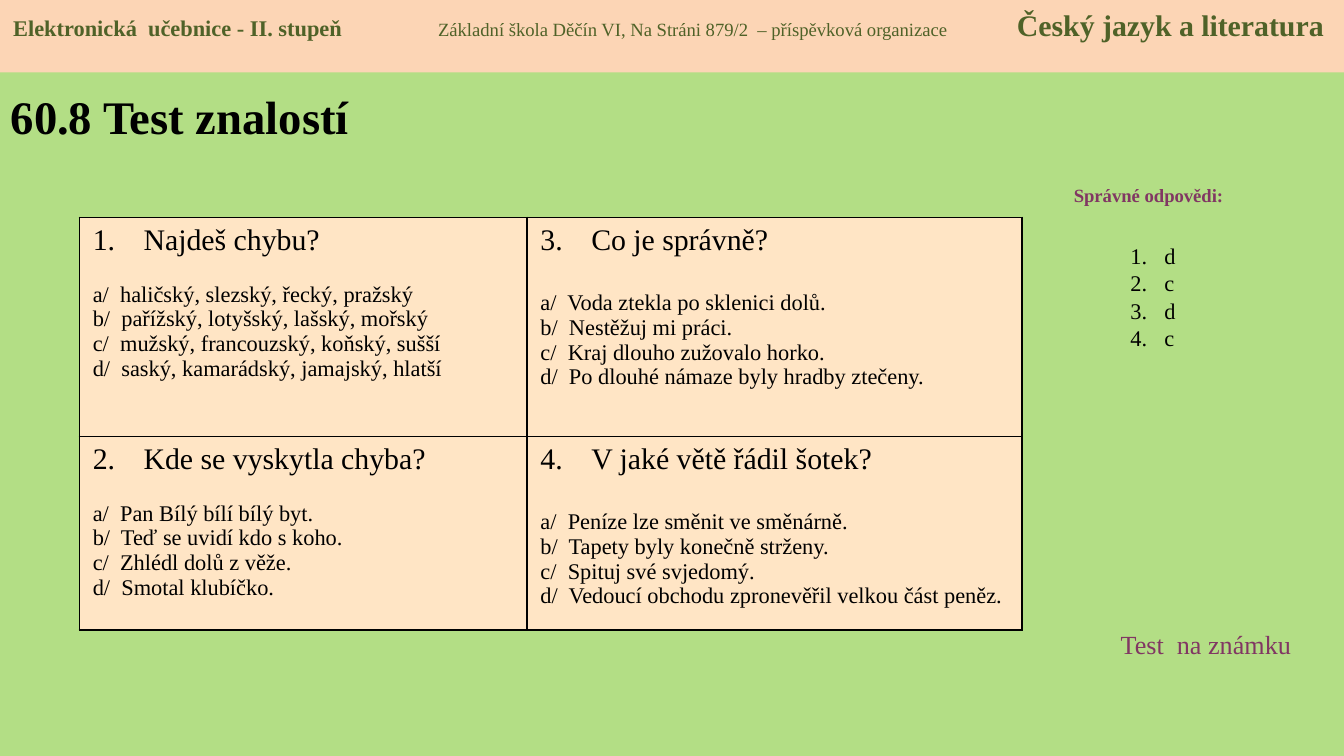
import dataclasses

import pptx
import pptx.dml.color
import pptx.enum.shapes
import pptx.enum.text
import pptx.oxml.ns
import pptx.util
from lxml import etree
from pptx.util import Cm, Pt

Align = pptx.enum.text.PP_ALIGN
Anchor = pptx.enum.text.MSO_ANCHOR


@dataclasses.dataclass(frozen=True)
class Theme:
    font: str = "Times New Roman"
    background: str = "B3DE85"
    banner: str = "FCD5B5"
    banner_text: str = "4F6228"
    cell: str = "FFE5C5"
    text: str = "000000"
    accent: str = "813763"
    title_size: float = 25
    question_size: float = 16
    note_size: float = 14
    body_size: float = 12
    small_size: float = 10


THEME = Theme()

BANNER = [
    ("Elektronická  učebnice - II. stupeň", THEME.body_size, True),
    ("Základní škola Děčín VI, Na Stráni 879/2  – příspěvková organizace", THEME.small_size, False),
    ("Český jazyk a literatura", THEME.question_size, True),
]
BANNER_TABS = [Cm(8.03), Cm(18.97)]

QUESTIONS = [
    ("Najdeš chybu?", [
        "a/  haličský, slezský, řecký, pražský",
        "b/  pařížský, lotyšský, lašský, mořský",
        "c/  mužský, francouzský, koňský, sušší",
        "d/  saský, kamarádský, jamajský, hlatší",
    ]),
    ("Kde se vyskytla chyba?", [
        "a/  Pan Bílý bílí bílý byt.",
        "b/  Teď se uvidí kdo s koho.",
        "c/  Zhlédl dolů z věže.",
        "d/  Smotal klubíčko.",
    ]),
    ("Co je správně?", [
        "a/  Voda ztekla po sklenici dolů.",
        "b/  Nestěžuj mi práci.",
        "c/  Kraj dlouho zužovalo horko.",
        "d/  Po dlouhé námaze byly hradby ztečeny.",
    ]),
    ("V jaké větě řádil šotek?", [
        "a/  Peníze lze směnit ve směnárně.",
        "b/  Tapety byly konečně strženy.",
        "c/  Spituj své svjedomý.",
        "d/  Vedoucí obchodu zpronevěřil velkou část peněz.",
    ]),
]
COLUMN_WIDTHS = [Cm(8.46), Cm(9.35)]
ROW_HEIGHTS = [Cm(4.14), Cm(3.66)]
COLUMN_GAPS = [Pt(13.3), Pt(17.7)]

CORRECT_ANSWERS = ["d", "c", "d", "c"]


def rgb(color):
    return pptx.dml.color.RGBColor.from_string(color)


def add_element(parent, tag, **attributes):
    values = {name: str(value) for name, value in attributes.items()}
    return etree.SubElement(parent, pptx.oxml.ns.qn(tag), values)


def paint(fill, color):
    fill.solid()
    fill.fore_color.rgb = rgb(color)


def style_font(font, size, color=THEME.text, bold=False):
    font.name = THEME.font
    font.size = Pt(size)
    font.bold = bold
    font.color.rgb = rgb(color)


def place(shape, left, top, width, height):
    shape.left, shape.top, shape.width, shape.height = left, top, width, height


def next_paragraph(text_frame, index):
    return text_frame.add_paragraph() if index else text_frame.paragraphs[0]


def number_paragraph(paragraph, indent, start=1):
    properties = paragraph._p.get_or_add_pPr()
    properties.set("marL", str(indent))
    properties.set("indent", str(-indent))
    add_element(properties, "a:buFont", typeface=THEME.font)
    add_element(properties, "a:buAutoNum", type="arabicPeriod", startAt=start)


def set_title(slide, text):
    title = slide.shapes.title
    place(title, Cm(-0.05), Cm(1.37), Cm(8.1), Cm(1.65))
    title.text_frame.auto_size = pptx.enum.text.MSO_AUTO_SIZE.NONE
    title.text_frame.vertical_anchor = Anchor.MIDDLE
    title.text_frame.text = text
    paragraph = title.text_frame.paragraphs[0]
    paragraph.alignment = Align.LEFT
    style_font(paragraph.font, THEME.title_size, bold=True)


def set_answer_list(slide, answers):
    body = slide.placeholders[1]
    place(body, Cm(21.11), Cm(3.94), Cm(1.4), Cm(3.33))
    text_frame = body.text_frame
    text_frame.auto_size = pptx.enum.text.MSO_AUTO_SIZE.NONE
    text_frame.margin_top = Cm(0.64)
    for index, answer in enumerate(answers):
        paragraph = next_paragraph(text_frame, index)
        paragraph.text = answer
        number_paragraph(paragraph, Cm(0.64))
        paragraph.space_before = Pt(0)
        paragraph.line_spacing = Pt(14.5)
        style_font(paragraph.font, THEME.body_size)


def add_label(slide, text, box, size, alignment, bold=False):
    label = slide.shapes.add_textbox(*box)
    label.text_frame.word_wrap = True
    label.text_frame.text = text
    paragraph = label.text_frame.paragraphs[0]
    paragraph.alignment = alignment
    style_font(paragraph.font, size, THEME.accent, bold)


def add_banner(slide, width):
    banner = slide.shapes.add_shape(
        pptx.enum.shapes.MSO_SHAPE.RECTANGLE, 0, 0, width, Cm(1.37))
    banner.shadow.inherit = False
    paint(banner.fill, THEME.banner)
    banner.line.fill.background()
    banner.text_frame.vertical_anchor = Anchor.TOP
    banner.text_frame.margin_right = 0
    paragraph = banner.text_frame.paragraphs[0]
    paragraph.alignment = Align.LEFT
    tabs = add_element(paragraph._p.get_or_add_pPr(), "a:tabLst")
    for position in BANNER_TABS:
        add_element(tabs, "a:tab", pos=position, algn="l")
    for index, (text, size, bold) in enumerate(BANNER):
        run = paragraph.add_run()
        run.text = f"\t{text}" if index else text
        style_font(run.font, size, THEME.banner_text, bold)


def outline_cell(cell):
    properties = cell._tc.get_or_add_tcPr()
    for side in ("L", "R", "T", "B"):
        line = add_element(properties, f"a:ln{side}", w=Pt(1))
        add_element(add_element(line, "a:solidFill"), "a:srgbClr", val=THEME.text)


def fill_question_cell(cell, number, question, options, gap):
    outline_cell(cell)
    paint(cell.fill, THEME.cell)
    heading = cell.text_frame.paragraphs[0]
    heading.text = question
    number_paragraph(heading, Cm(0.96), number)
    style_font(heading.font, THEME.question_size)
    for index, option in enumerate(options):
        paragraph = cell.text_frame.add_paragraph()
        paragraph.text = option
        paragraph.space_before = Pt(0) if index else gap
        style_font(paragraph.font, THEME.body_size)


def add_question_table(slide):
    table = slide.shapes.add_table(
        len(ROW_HEIGHTS), len(COLUMN_WIDTHS), Cm(1.5), Cm(4.11),
        sum(COLUMN_WIDTHS), sum(ROW_HEIGHTS)).table
    table.first_row = table.horz_banding = False
    for column, width in zip(table.columns, COLUMN_WIDTHS):
        column.width = width
    for row, height in zip(table.rows, ROW_HEIGHTS):
        row.height = height
    for index, (question, options) in enumerate(QUESTIONS):
        column, row = divmod(index, len(ROW_HEIGHTS))
        fill_question_cell(table.cell(row, column), index + 1, question, options, COLUMN_GAPS[column])


def main():
    presentation = pptx.Presentation()
    presentation.slide_width, presentation.slide_height = Cm(25.4), Cm(14.29)
    slide = presentation.slides.add_slide(presentation.slide_layouts[1])
    paint(slide.background.fill, THEME.background)
    set_title(slide, "60.8 Test znalostí")
    set_answer_list(slide, CORRECT_ANSWERS)
    add_label(slide, "Správné odpovědi:", (Cm(19.71), Cm(3.35), Cm(3.99), Cm(0.69)),
              THEME.small_size, Align.CENTER, bold=True)
    add_question_table(slide)
    add_label(slide, "Test  na známku", (Cm(20.93), Cm(11.76), Cm(3.99), Cm(0.86)),
              THEME.note_size, Align.LEFT)
    add_banner(slide, presentation.slide_width)
    presentation.save("out.pptx")


if __name__ == "__main__":
    main()
